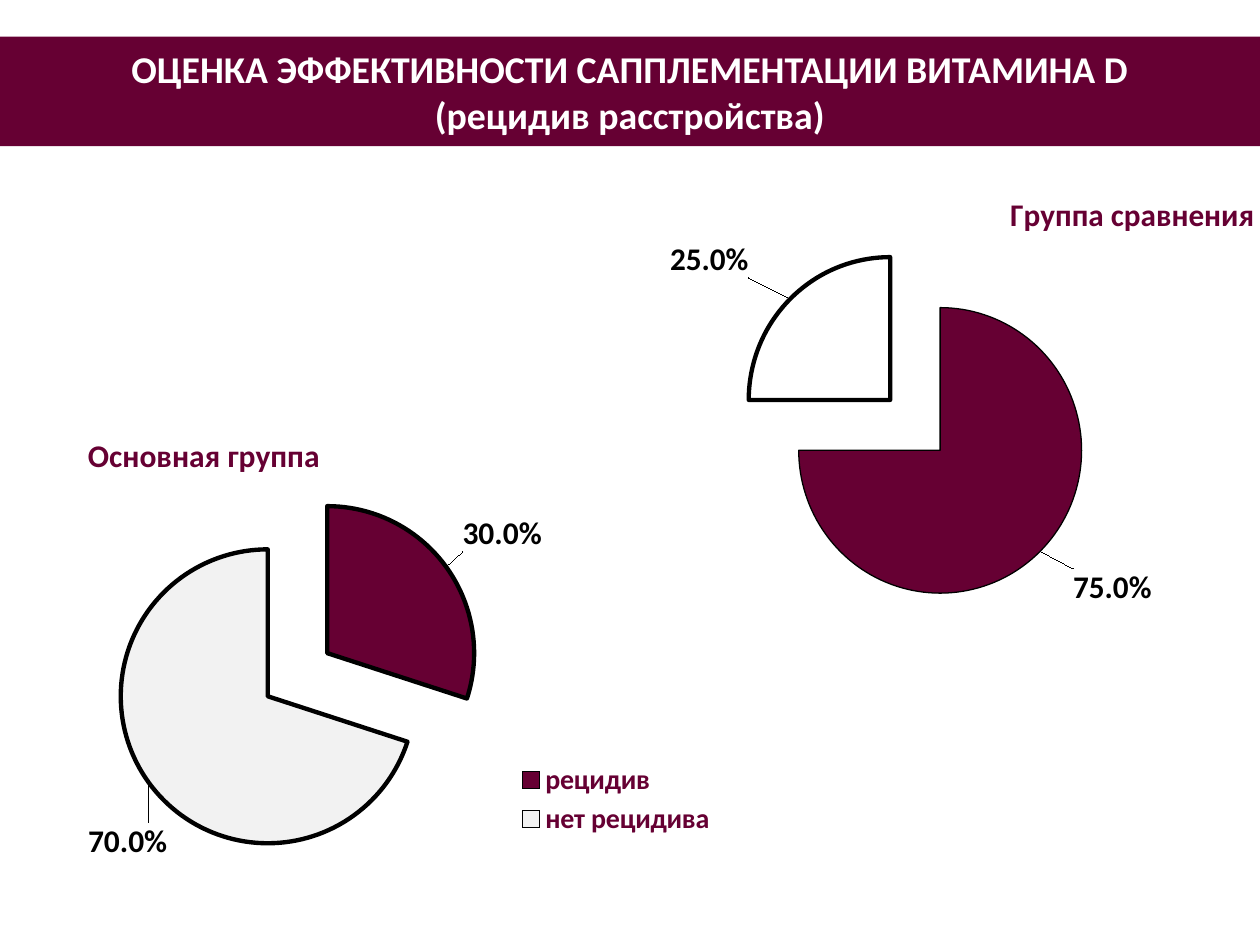
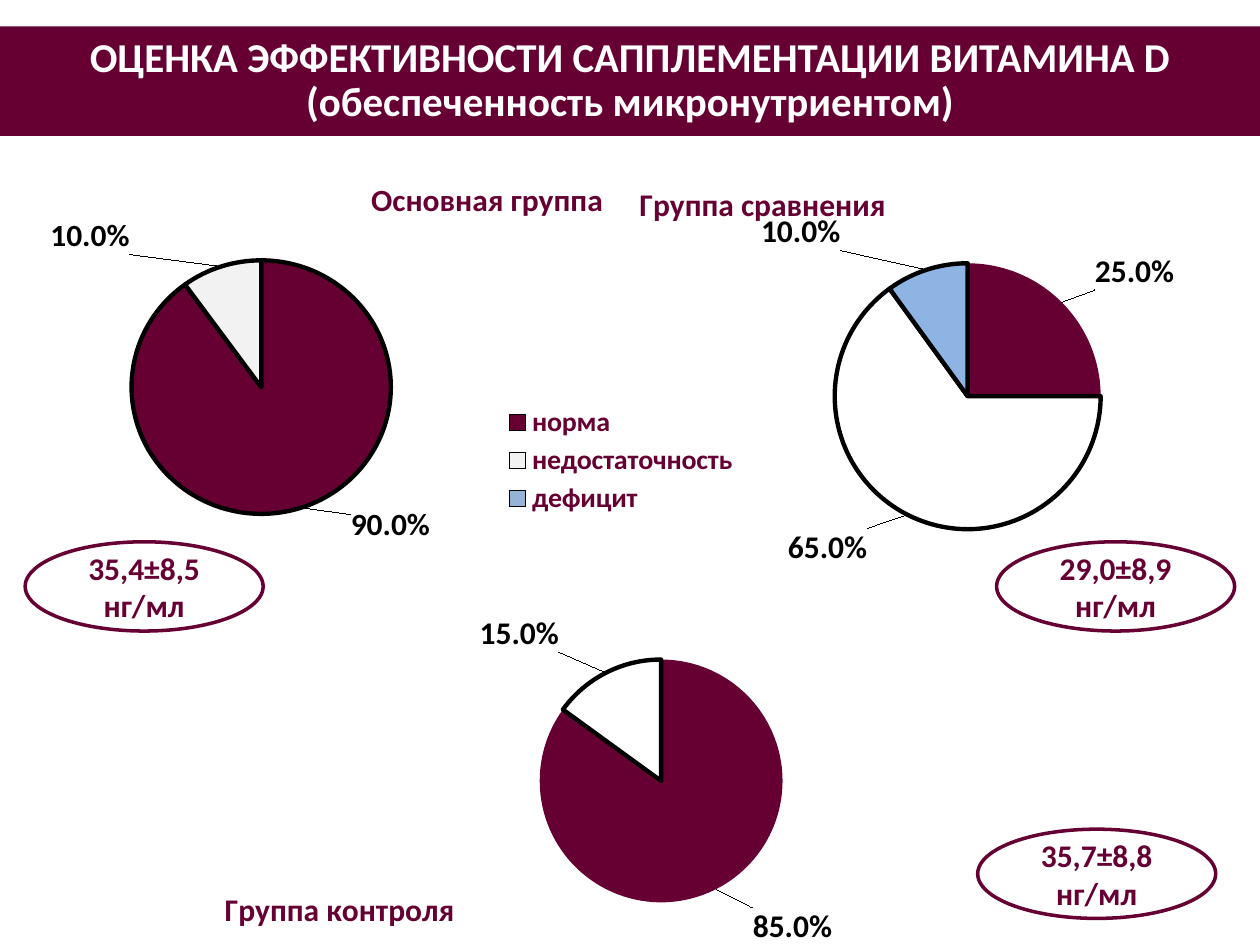
from pptx import Presentation
from pptx.chart.data import CategoryChartData
from pptx.dml.color import RGBColor
from pptx.enum import chart as ch, shapes, text
from pptx.oxml import parse_xml
from pptx.oxml.ns import nsdecls, qn
from pptx.util import Pt

BURGUNDY = RGBColor(0x66, 0x00, 0x33)
WHITE = RGBColor(0xFF, 0xFF, 0xFF)
BLACK = RGBColor(0, 0, 0)
PALE = RGBColor(0xF2, 0xF2, 0xF2)
STEEL = RGBColor(0x95, 0xB3, 0xD7)
SKY = RGBColor(0x8E, 0xB4, 0xE3)
FONT = "Calibri"
PERCENT = "0.0%"


def style(font, size, color):
    font.name = FONT
    font.size = Pt(size)
    font.bold = True
    font.color.rgb = color


def element(tag, value):
    return parse_xml(f'<c:{tag} {nsdecls("c")} val="{value}"/>')


class Deck:
    def __init__(self):
        self.prs = Presentation()
        self.prs.slide_width, self.prs.slide_height = Pt(720), Pt(540)
        self.slide = None

    def new_slide(self, heading, top, size, spacing):
        self.slide = self.prs.slides.add_slide(self.prs.slide_layouts[5])
        band = self.slide.shapes.title
        band.left, band.top, band.width, band.height = Pt(0), Pt(top), Pt(720), Pt(62.6)
        band.fill.solid()
        band.fill.fore_color.rgb = BURGUNDY
        frame = band.text_frame
        frame.auto_size = text.MSO_AUTO_SIZE.NONE
        self.centre_text(frame, heading, size, WHITE)
        frame.paragraphs[0].line_spacing = spacing

    def centre_text(self, frame, words, size, color):
        frame.text = words
        frame.word_wrap = True
        frame.vertical_anchor = text.MSO_ANCHOR.MIDDLE
        paragraph = frame.paragraphs[0]
        paragraph.alignment = text.PP_ALIGN.CENTER
        style(paragraph.font, size, color)

    def level(self, left, top, words):
        oval = self.slide.shapes.add_shape(
            shapes.MSO_SHAPE.OVAL, Pt(left), Pt(top), Pt(136), Pt(51))
        oval.shadow.inherit = False
        oval.fill.solid()
        oval.fill.fore_color.rgb = WHITE
        oval.line.color.rgb = BURGUNDY
        oval.line.width = Pt(2)
        self.centre_text(oval.text_frame, words, 18, BURGUNDY)

    def place(self, part, box, size, index=1, target=None, edge=True):
        layout = part.find(qn("c:layout"))
        if layout is not None:
            part.remove(layout)
        layout = parse_xml(f'<c:layout {nsdecls("c")}><c:manualLayout/></c:layout>')
        manual = layout[0]
        if target:
            manual.append(element("layoutTarget", target))
        if edge:
            manual.append(element("xMode", "edge"))
            manual.append(element("yMode", "edge"))
        for tag, length, whole in zip("xywh", box, size * 2):
            manual.append(element(tag, length / whole))
        part.insert(index, layout)

    def pie(self, box, group, group_at, plot_box, categories, values, colors,
            borders, label_shifts, explosion=0, legend_box=None):
        data = CategoryChartData(number_format=PERCENT)
        data.categories = categories
        data.add_series("Series 1", values)
        chart = self.slide.shapes.add_chart(
            ch.XL_CHART_TYPE.PIE, *map(Pt, box), data).chart
        size = box[2:]
        chart.font.name, chart.font.size = FONT, Pt(18)
        chart.font.color.rgb = BLACK
        root = chart.element
        root.find(qn("c:chart")).addnext(parse_xml(
            f'<c:spPr {nsdecls("c", "a")}><a:noFill/><a:ln><a:noFill/></a:ln></c:spPr>'))

        chart.has_title = True
        title_frame = chart.chart_title.text_frame
        title_frame.text = group
        style(title_frame.paragraphs[0].font, 18, BURGUNDY)
        self.place(chart.chart_title.element, group_at, size)
        self.place(root.xpath(".//c:plotArea")[0], plot_box, size, 0, "inner")

        chart.has_legend = legend_box is not None
        if legend_box:
            chart.legend.position = ch.XL_LEGEND_POSITION.RIGHT
            chart.legend.include_in_layout = False
            style(chart.legend.font, 16, BURGUNDY)
            self.place(root.xpath(".//c:legend")[0], legend_box, size)

        plot = chart.plots[0]
        plot.vary_by_categories = True
        series = plot.series[0]
        series.data_labels.number_format = PERCENT
        series.data_labels.number_format_is_linked = False
        series.data_labels.show_value = True
        style(series.data_labels.font, 18, BLACK)
        for index, (color, border) in enumerate(zip(colors, borders)):
            sector = series.points[index].format
            sector.fill.solid()
            sector.fill.fore_color.rgb = color
            if border:
                sector.line.color.rgb = BLACK
                sector.line.width = Pt(border)
            else:
                sector.line.fill.background()
        for index, shift in enumerate(label_shifts):
            label = series.points[index].data_label
            style(label.font, 18, BLACK)
            label.position = ch.XL_LABEL_POSITION.OUTSIDE_END
            node = root.xpath(f".//c:dLbl[c:idx/@val='{index}']")[0]
            self.place(node, shift, size, edge=False)
            node.insert(2, parse_xml(
                f'<c:numFmt {nsdecls("c")} formatCode="{PERCENT}" sourceLinked="0"/>'))
        if explosion:
            root.xpath(".//c:dPt")[0].addprevious(element("explosion", explosion))


def relapse_slide(deck):
    deck.new_slide("ОЦЕНКА ЭФФЕКТИВНОСТИ САППЛЕМЕНТАЦИИ ВИТАМИНА D\v"
                   "(рецидив расстройства)", 20.9, 21.6, 1.0)
    deck.pie((0, 230.4, 445, 309.6), "Основная группа", (47, 14),
             (65, 50.2, 210, 210), ("рецидив", "нет рецидива"), (0.3, 0.7),
             (BURGUNDY, PALE), (2.5, 2.5), ((6, -6), (14, 20)), 25,
             (292, 203, 120, 47))
    deck.pie((354.2, 88.6, 365.8, 289.4), "Группа сравнения", (222, 18),
             (68.4, 52.4, 204, 204), ("1", "2"), (0.75, 0.25),
             (BURGUNDY, WHITE), (0.75, 2.5), ((16, 7), (-21, -9)), 25)


def supply_slide(deck):
    deck.new_slide("ОЦЕНКА ЭФФЕКТИВНОСТИ САППЛЕМЕНТАЦИИ ВИТАМИНА D\v"
                   "(обеспеченность микронутриентом)", 15.1, 23.4, 0.9)
    deck.pie((-25.2, 82.8, 468, 232.6), "Основная группа", (234, 16),
             (51, 67.5, 247, 148.2), ("норма", "недостаточность", "дефицит"),
             (0.9, 0.1, None), (BURGUNDY, PALE, STEEL), (2.5, 2.5, 2.5),
             ((27, 0), (-51, -3)), legend_box=(310, 150, 140, 69))
    deck.pie((354.2, 77, 365.8, 249.1), "Группа сравнения", (8, 24),
             (72.8, 73.5, 252, 152), ("1", "2", "3"), (0.25, 0.65, 0.1),
             (BURGUNDY, WHITE, SKY), (0, 2.5, 2.5),
             ((16, -4), (-21, 4), (-48, -7)))
    deck.pie((121.7, 319, 473, 221), "Группа контроля", (3.5, 185),
             (88, 57.9, 336.3, 138.8), ("1", "2"), (0.85, 0.15),
             (BURGUNDY, WHITE), (0, 2.5), ((19, 7), (-25, -8)))
    for left, top, mean in ((558.7, 473.8, "35,7±8,8"), (14.4, 309.6, "35,4±8,5"),
                            (569.5, 309.6, "29,0±8,9")):
        deck.level(left, top, f"{mean} нг/мл")


def main():
    deck = Deck()
    relapse_slide(deck)
    supply_slide(deck)
    deck.prs.save("out.pptx")


if __name__ == "__main__":
    main()
